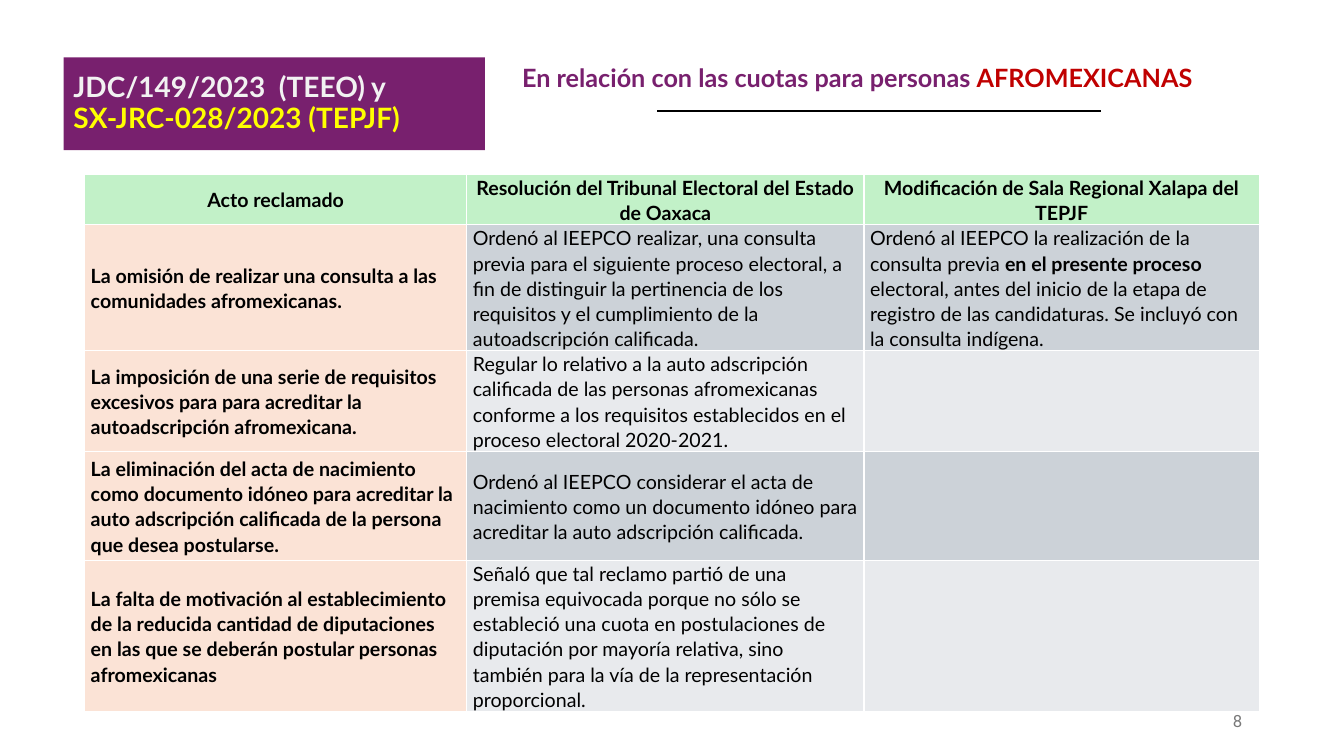
"""Build the slide on rulings about quotas for Afro-Mexican candidates."""
from lxml import etree
from pptx import Presentation
from pptx.dml.color import RGBColor
from pptx.enum import shapes, text
from pptx.oxml.ns import qn
from pptx.util import Inches, Pt

PURPLE = RGBColor(0x78, 0x20, 0x6E)
RED = RGBColor(0xC0, 0x00, 0x00)
YELLOW = RGBColor(0xFF, 0xFF, 0x00)
OFF_WHITE = RGBColor(0xF2, 0xF2, 0xF2)
BLACK = RGBColor(0x00, 0x00, 0x00)
GRAY = RGBColor(0x79, 0x79, 0x79)
GREEN = RGBColor(0xC2, 0xF1, 0xC8)
PEACH = RGBColor(0xFB, 0xE3, 0xD6)
BANDS = [RGBColor(0xCC, 0xD2, 0xD8), RGBColor(0xE8, 0xEA, 0xED)]

COLUMN_WIDTHS = [3.79, 3.94, 3.92]
ROW_HEIGHTS = [0.5, 1.25, 1, 1.08, 1.25]
ROWS = [
    ["Acto reclamado",
     "Resolución del Tribunal Electoral del Estado de Oaxaca",
     "Modificación de Sala Regional Xalapa del TEPJF"],
    ["La omisión de realizar una consulta a las comunidades afromexicanas.",
     "Ordenó al IEEPCO realizar, una consulta previa para el siguiente proceso electoral, "
     "a fin de distinguir la pertinencia de los requisitos y el cumplimiento de la "
     "autoadscripción calificada.",
     "Ordenó al IEEPCO la realización de la consulta previa |en el presente proceso |"
     "electoral, antes del inicio de la etapa de registro de las candidaturas. "
     "Se incluyó con la consulta indígena."],
    ["La imposición de una serie de requisitos excesivos para para acreditar la "
     "autoadscripción afromexicana.",
     "Regular lo relativo a la auto adscripción calificada de las personas afromexicanas "
     "conforme a los requisitos establecidos en el proceso electoral 2020-2021.",
     ""],
    ["La eliminación del acta de nacimiento como documento idóneo para acreditar la auto "
     "adscripción calificada de la persona que desea postularse.",
     "Ordenó al IEEPCO considerar el acta de nacimiento como un documento idóneo para "
     "acreditar la auto adscripción calificada.",
     ""],
    ["La falta de motivación al establecimiento de la reducida cantidad de diputaciones en "
     "las que se deberán postular personas afromexicanas",
     "Señaló que tal reclamo partió de una premisa equivocada porque no sólo se estableció "
     "una cuota en postulaciones de diputación por mayoría relativa, sino también para la "
     "vía de la representación proporcional.",
     ""],
]


def add_span(para, words, size, color, bold=True, name="Lato"):
    span = para.add_run()
    span.text = words
    for key, value in {"size": Pt(size), "bold": bold, "name": name}.items():
        setattr(span.font, key, value)
    span.font.color.rgb = color


deck = Presentation()
deck.slide_width, deck.slide_height = Inches(13.33), Inches(7.5)
page = deck.slides.add_slide(deck.slide_layouts[6])

rule = page.shapes.add_connector(
    shapes.MSO_CONNECTOR.STRAIGHT, Inches(6.52), Inches(1.1), Inches(10.92), Inches(1.1))
rule.line.color.rgb = BLACK
rule.line.width = Pt(1.5)
etree.SubElement(rule._element.spPr, qn("a:effectLst"))

heading = page.shapes.add_textbox(Inches(5.08), Inches(0.57), Inches(7.28), Inches(0.4))
heading.text_frame.word_wrap = True
para = heading.text_frame.paragraphs[0]
add_span(para, "En relación con las cuotas para personas ", 18, PURPLE)
add_span(para, "AFROMEXICANAS", 18, RED)

table = page.shapes.add_table(
    len(ROWS), len(COLUMN_WIDTHS), Inches(0.84), Inches(1.73),
    Inches(sum(COLUMN_WIDTHS)), Inches(sum(ROW_HEIGHTS))).table
for column, width in zip(table.columns, COLUMN_WIDTHS):
    column.width = Inches(width)
for row_index, (row, height) in enumerate(zip(ROWS, ROW_HEIGHTS)):
    table.rows[row_index].height = Inches(height)
    for column_index, words in enumerate(row):
        cell = table.cell(row_index, column_index)
        is_header = row_index == 0
        is_label = is_header or column_index == 0
        cell.fill.solid()
        cell.fill.fore_color.rgb = (
            GREEN if is_header else PEACH if is_label else BANDS[(row_index - 1) % 2])
        if not words:
            continue
        layout = {"margin_left": Inches(0.06), "margin_right": Inches(0.06),
                  "margin_top": 0, "margin_bottom": 0,
                  "vertical_anchor": text.MSO_ANCHOR.MIDDLE}
        for key, value in layout.items():
            setattr(cell, key, value)
        para = cell.text_frame.paragraphs[0]
        para.alignment = text.PP_ALIGN.CENTER if is_header else text.PP_ALIGN.LEFT
        para.line_spacing = 1.07
        para.space_after = Pt(8)
        for part_index, part in enumerate(words.split("|")):
            add_span(para, part, 14, BLACK, bold=is_label or part_index == 1)

title = page.shapes.add_shape(
    shapes.MSO_SHAPE.RECTANGLE, Inches(0.63), Inches(0.57), Inches(4.18), Inches(0.92))
title.shadow.inherit = False
title.fill.solid()
title.fill.fore_color.rgb = PURPLE
title.line.fill.background()
title.text_frame.vertical_anchor = text.MSO_ANCHOR.MIDDLE
para = title.text_frame.paragraphs[0]
para.alignment = text.PP_ALIGN.LEFT
para.line_spacing = 0.9
add_span(para, "JDC/149/2023  (TEEO) y ", 20, OFF_WHITE)
para.add_line_break()
add_span(para, "SX-JRC-028/2023 (TEPJF)", 20, YELLOW)

number = page.shapes.add_textbox(Inches(9.42), Inches(6.95), Inches(3), Inches(0.4))
number.text_frame.word_wrap = True
number.text_frame.vertical_anchor = text.MSO_ANCHOR.MIDDLE
para = number.text_frame.paragraphs[0]
para.alignment = text.PP_ALIGN.RIGHT
add_span(para, "8", 12, GRAY, bold=False, name="Roboto")

deck.save("out.pptx")
